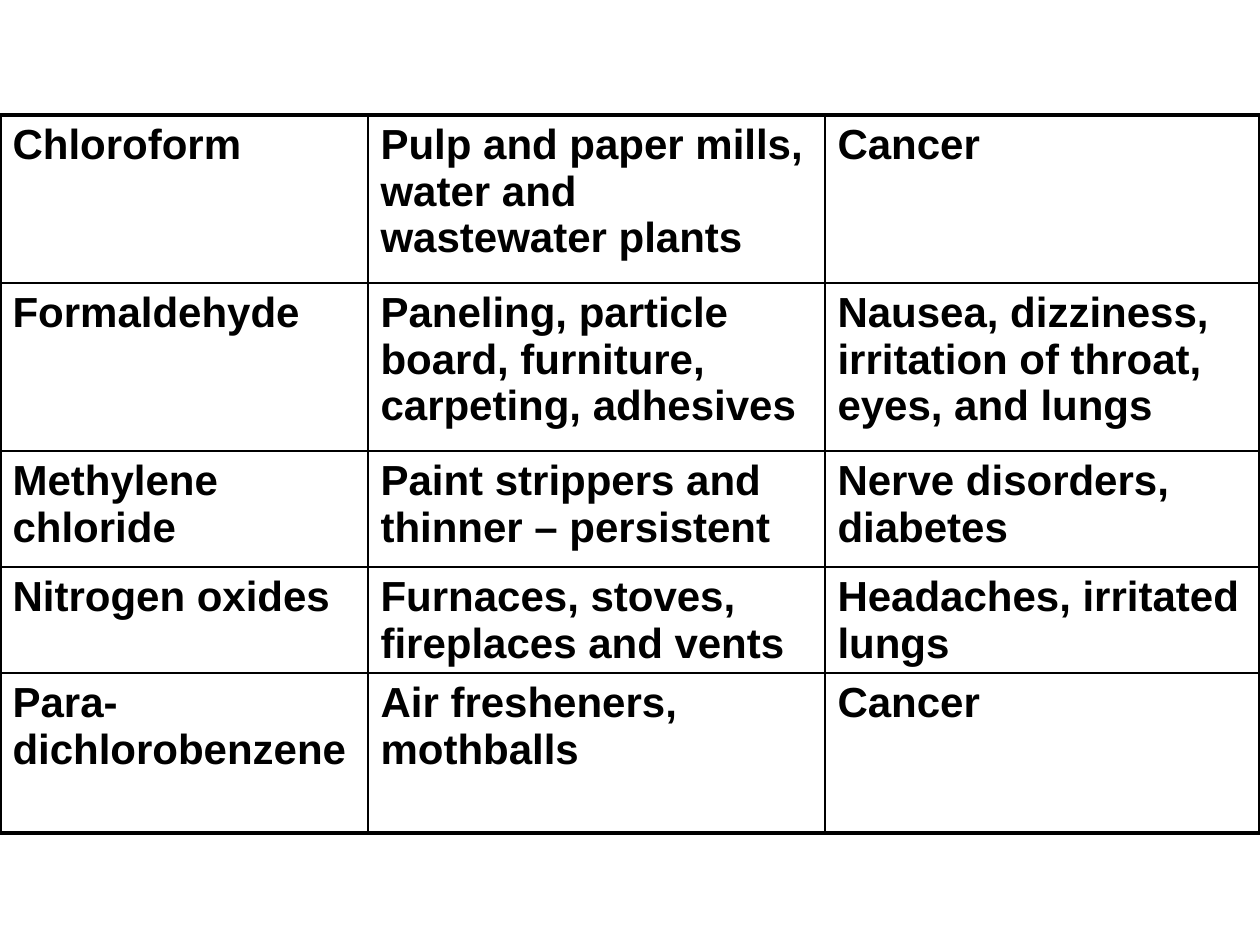
from lxml.etree import SubElement
from pptx import Presentation
from pptx.dml.color import RGBColor as RGB
from pptx.oxml.ns import qn
from pptx.util import Emu, Pt

BLACK = RGB(0, 0, 0)
SCALE = 914400 / 126  # EMU in one px
THIN, THICK = Pt(1), Pt(2.25)
FONT = {"name": "Arial", "size": Pt(24), "bold": True}

COLS = [368, 457, 435]
ROWS = [168, 168, 116, 105, 160]
# Pollutant, sources, health effects
DATA = [
    ("Chloroform", "Pulp and paper mills, water and wastewater plants", "Cancer"),
    ("Formaldehyde", "Paneling, particle board, furniture, carpeting, adhesives",
     "Nausea, dizziness, irritation of throat, eyes, and lungs"),
    ("Methylene chloride", "Paint strippers and thinner – persistent",
     "Nerve disorders, diabetes"),
    ("Nitrogen oxides", "Furnaces, stoves, fireplaces and vents",
     "Headaches, irritated lungs"),
    ("Para-dichlorobenzene", "Air fresheners, mothballs", "Cancer"),
]


def px(n):
    return Emu(round(n * SCALE))


def set_edges(cell, edges):
    """Draw the cell borders; they must come before the fill."""
    props = cell._tc.get_or_add_tcPr()
    for i, (side, width) in enumerate(edges.items()):
        line = SubElement(props, qn(f"a:ln{side}"), w=str(width))
        fill = SubElement(line, qn("a:solidFill"))
        SubElement(fill, qn("a:srgbClr"), val=str(BLACK))
        props.insert(i, line)


def fill_cell(cell, text, edges):
    cell.fill.background()
    set_edges(cell, edges)
    cell.text = text
    font = cell.text_frame.paragraphs[0].runs[0].font
    for key, value in FONT.items():
        setattr(font, key, value)
    font.color.rgb = BLACK


def add_grid(slide, left, top):
    """Table of pollutants with a thick outer frame."""
    box = [px(n) for n in (left, top, sum(COLS), sum(ROWS))]
    table = slide.shapes.add_table(len(ROWS), len(COLS), *box).table
    table.first_row = table.horz_banding = False
    for col, width in zip(table.columns, COLS):
        col.width = px(width)
    for row, height in zip(table.rows, ROWS):
        row.height = px(height)

    last_row, last_col = len(ROWS) - 1, len(COLS) - 1
    for r, line in enumerate(DATA):
        for c, text in enumerate(line):
            outer = {"L": c == 0, "R": c == last_col,
                     "T": r == 0, "B": r == last_row}
            edges = {side: THICK if out else THIN for side, out in outer.items()}
            fill_cell(table.cell(r, c), text, edges)


def main():
    deck = Presentation()
    deck.slide_width, deck.slide_height = px(1260), px(945)
    slide = deck.slides.add_slide(deck.slide_layouts[6])
    add_grid(slide, 0, 115)
    deck.save("out.pptx")


if __name__ == "__main__":
    main()
